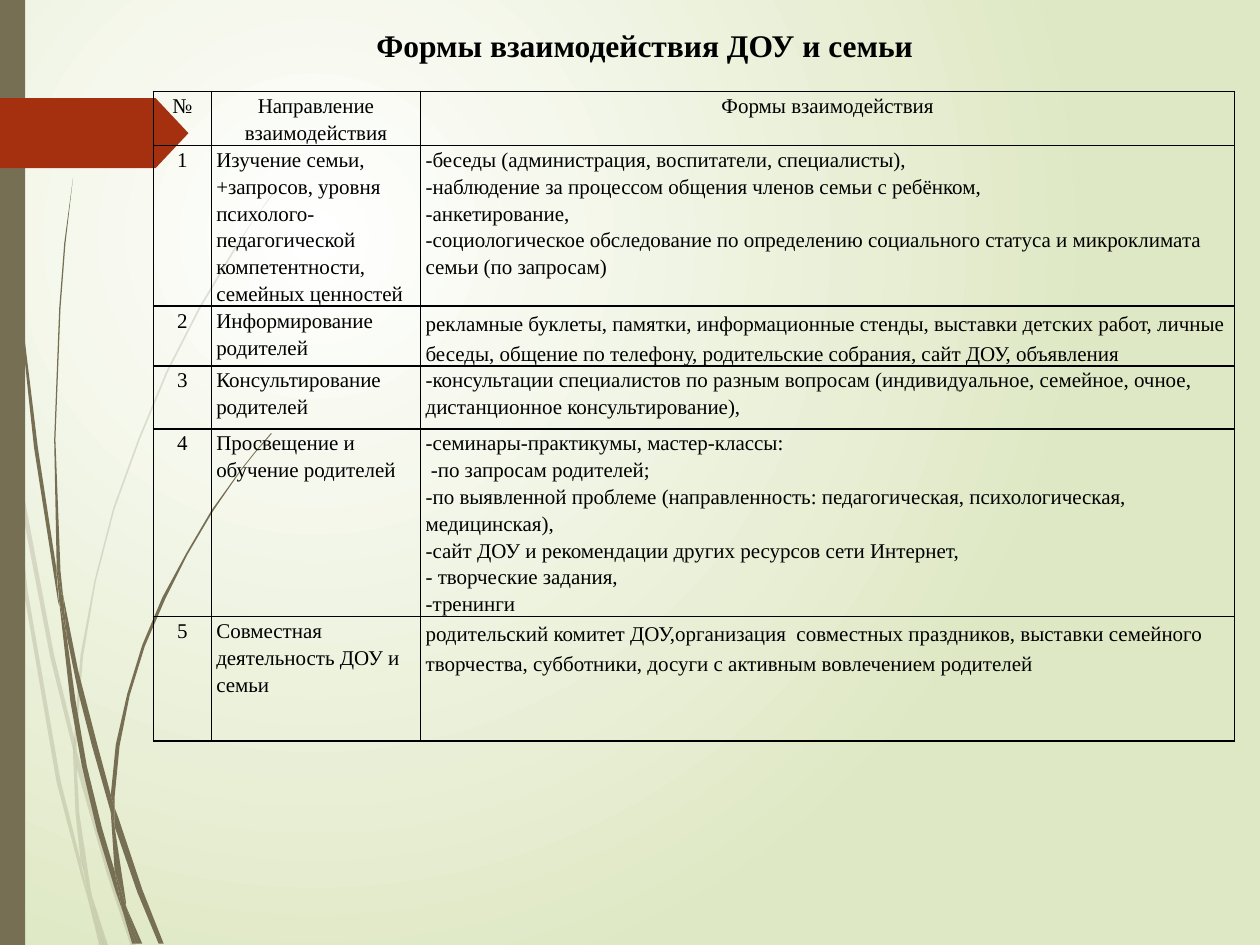
from lxml.etree import SubElement
from pptx import Presentation
from pptx.dml.color import RGBColor
from pptx.enum.shapes import MSO_SHAPE
from pptx.enum.text import MSO_ANCHOR, MSO_AUTO_SIZE, PP_ALIGN
from pptx.oxml import parse_xml
from pptx.oxml.ns import qn
from pptx.util import Cm, Pt

BLACK = RGBColor(0x00, 0x00, 0x00)
WHITE = RGBColor(0xFF, 0xFF, 0xFF)
PALE_GREEN = RGBColor(0xDF, 0xE8, 0xC4)
OLIVE = RGBColor(0x76, 0x6F, 0x54)
RUST = RGBColor(0xA5, 0x30, 0x10)
FONT = "Times New Roman"
DRAWING = "http://schemas.openxmlformats.org/drawingml/2006/main"

# Outlines of the grass slivers: x,y corners on a 217 x 750 grid
GRASS_GRID = (217, 750)
PALE_GRASS = [
    "8,350 6,322 0,282 0,299 7,344",
    "40,522 59,599 59,586 43,520 10,345 12,376",
    "64,607 61,596 61,610 85,694 104,751 108,751 88,692",
    "83,751 86,751 73,711",
    "64,683 48,619 22,469 12,376 8,350 19,470 45,621 64,693 70,714 69,707",
    "58,599 60,646 64,683 67,692 73,711 72,706 63,646 61,610 61,608",
    "61,584 66,521 76,462 91,404 111,349 133,296 159,245 187,198 201,175 "
    "217,154 217,153 201,175 186,197 158,244 132,295 110,348 90,403 75,461 "
    "64,520 59,584 59,586 61,596",
    "70,714 79,751 82,751",
    "61,608 61,610 61,596 59,586 58,599",
    "67,692 65,683 69,707 70,714 82,751 83,751 73,711",
]
DARK_GRASS = [
    "5,110 14,233 27,355 46,477 47,481 45,457 45,453 30,355 15,232 6,109 "
    "4,48 3,0 2,0 3,48",
    "73,592 88,645 88,633 88,631 77,590 62,532 50,472 53,505 62,549",
    "94,649 91,641 91,656 109,708 126,749 130,749 113,706",
    "91,691 81,657 69,608 60,556 53,505 47,477 56,557 65,608 77,659 92,708 "
    "97,722 96,717",
    "50,472 48,453 44,349 48,245 52,193 58,141 51,193 47,245 43,349 45,449 "
    "49,472",
    "110,749 113,749 100,719",
    "47,477 53,505 50,472 49,472 45,449 45,453",
    "91,633 95,592 103,552 115,513 131,476 149,440 169,406 191,374 203,359 "
    "216,344 215,344 203,358 191,373 168,405 148,439 129,474 113,512 "
    "101,551 92,591 88,631 91,641",
    "97,722 105,749 108,749",
    "88,645 91,691 96,706 100,719 100,716 91,656 90,651",
    "88,645 90,651 91,656 91,641 88,631 88,633",
    "96,706 91,691 96,717 97,722 108,749 110,749 100,719",
]

COLUMNS = [1.17, 4.22, 16.41]
ROWS = [1.09, 3.23, 1.19, 1.27, 3.78, 2.51]
SPACING, LOOSE_SPACING = 1.15, 1.28
LOOSE_ROWS = (2, 5)
TABLE_TEXT = [
    ("№", "Направление взаимодействия", ["Формы взаимодействия"]),
    ("1", "Изучение семьи, +запросов, уровня психолого-педагогической "
          "компетентности, семейных ценностей",
     ["-беседы (администрация, воспитатели, специалисты),",
      "-наблюдение за процессом общения членов семьи с ребёнком,",
      "-анкетирование,",
      "-социологическое обследование по определению социального статуса "
      "и микроклимата семьи (по запросам)"]),
    ("2", "Информирование родителей",
     ["рекламные буклеты, памятки, информационные стенды, выставки детских "
      "работ, личные беседы, общение по телефону, родительские собрания, "
      "сайт ДОУ, объявления"]),
    ("3", "Консультирование родителей",
     ["-консультации специалистов по разным вопросам (индивидуальное, "
      "семейное, очное, дистанционное консультирование),"]),
    ("4", "Просвещение и обучение родителей",
     ["-семинары-практикумы, мастер-классы:",
      " -по запросам родителей;",
      "-по выявленной проблеме (направленность: педагогическая, "
      "психологическая, медицинская),",
      "-сайт ДОУ и рекомендации других ресурсов сети Интернет,",
      "- творческие задания,",
      "-тренинги"]),
    ("5", "Совместная деятельность ДОУ и семьи",
     ["родительский комитет ДОУ,организация  совместных праздников, выставки "
      "семейного творчества, субботники, досуги с активным вовлечением "
      "родителей"]),
]


def paint(shape, color, opacity=100):
    shape.shadow.inherit = False
    shape.fill.solid()
    shape.fill.fore_color.rgb = color
    shape.line.fill.background()
    if opacity < 100:
        tone = shape.fill._xPr.find(qn("a:solidFill"))[0]
        SubElement(tone, qn("a:alpha"), val=str(opacity * 1000))


def set_background(page):
    fill = page.background.fill
    fill.gradient()
    for stop, color in zip(fill.gradient_stops, (WHITE, PALE_GREEN)):
        stop.color.rgb = color
    gradient = page.background._cSld.find(".//" + qn("a:gradFill"))
    gradient.replace(gradient.find(qn("a:lin")), parse_xml(
        f'<a:path xmlns:a="{DRAWING}" path="circle"><a:fillToRect l="50000" '
        't="50000" r="100000" b="100000"/></a:path>'))


def add_grass(page, left, top, width, height):
    x_unit, y_unit = width / GRASS_GRID[0], height / GRASS_GRID[1]
    for slivers, opacity in ((PALE_GRASS, 20), (DARK_GRASS, 100)):
        tuft = page.shapes.add_group_shape()
        for sliver in slivers:
            corners = [corner.split(",") for corner in sliver.split()]
            outline = [(round(left + int(x) * x_unit), round(top + int(y) * y_unit))
                       for x, y in corners]
            builder = tuft.shapes.build_freeform(*outline[0])
            builder.add_line_segments(outline[1:])
            paint(builder.convert_to_shape(), OLIVE, opacity)


def add_side_decor(page, left, top, width, height):
    add_grass(page, left, top, width, height)
    # Edge bar
    bar = page.shapes.add_shape(MSO_SHAPE.RECTANGLE, left, top, Cm(0.51), height)
    paint(bar, OLIVE)
    # Number tag
    tag = page.shapes.add_shape(MSO_SHAPE.PENTAGON, left, top + Cm(1.98),
                                Cm(3.8), Cm(1.41))
    tag.adjustments[0] = 0.47
    paint(tag, RUST)


def style_cell(cell, lines, centered, spacing):
    cell.margin_left = cell.margin_right = Cm(0.1)
    cell.margin_top = cell.margin_bottom = 0
    cell.text_frame.text = "\n".join(lines)
    for para in cell.text_frame.paragraphs:
        para.alignment = PP_ALIGN.CENTER if centered else PP_ALIGN.LEFT
        para.line_spacing = spacing
        para.font.name, para.font.size = FONT, Pt(12)
        para.font.color.rgb = BLACK
    # Borders come before the fill
    properties = cell._tc.get_or_add_tcPr()
    for side in ("lnL", "lnR", "lnT", "lnB"):
        border = SubElement(properties, qn("a:" + side), w=str(Pt(1)))
        solid = SubElement(border, qn("a:solidFill"))
        SubElement(solid, qn("a:srgbClr"), val=str(BLACK))
    cell.fill.background()


def add_forms_table(page, left, top, width, height):
    table = page.shapes.add_table(len(ROWS), len(COLUMNS), left, top,
                                  width, height).table
    table.first_row = table.horz_banding = False
    for column, share in zip(table.columns, COLUMNS):
        column.width = round(width * share / sum(COLUMNS))
    for row, share in zip(table.rows, ROWS):
        row.height = round(height * share / sum(ROWS))
    for i, (number, direction, forms) in enumerate(TABLE_TEXT):
        for j, lines in enumerate(([number], [direction], forms)):
            loose = i in LOOSE_ROWS and j == 2
            style_cell(table.cell(i, j), lines, centered=i == 0 or j == 0,
                       spacing=LOOSE_SPACING if loose else SPACING)


def add_title(page, left, top, width, height):
    frame = page.shapes.add_textbox(left, top, width, height).text_frame
    frame.word_wrap = False
    frame.auto_size = MSO_AUTO_SIZE.SHAPE_TO_FIT_TEXT
    frame.vertical_anchor = MSO_ANCHOR.MIDDLE
    para = frame.paragraphs[0]
    para.text = "Формы взаимодействия ДОУ и семьи"
    para.alignment = PP_ALIGN.CENTER
    para.font.name, para.font.size, para.font.bold = FONT, Pt(18), True
    para.font.color.rgb = BLACK


def main():
    deck = Presentation()
    deck.slide_width, deck.slide_height = Cm(25.4), Cm(19.05)
    page = deck.slides.add_slide(deck.slide_layouts[6])
    set_background(page)
    add_side_decor(page, 0, 0, Cm(5.51), deck.slide_height)
    add_forms_table(page, Cm(3.09), Cm(1.84), Cm(sum(COLUMNS)), Cm(sum(ROWS)))
    add_title(page, Cm(7.27), Cm(0.4), Cm(11.46), Cm(1.02))
    deck.save("out.pptx")


if __name__ == "__main__":
    main()
